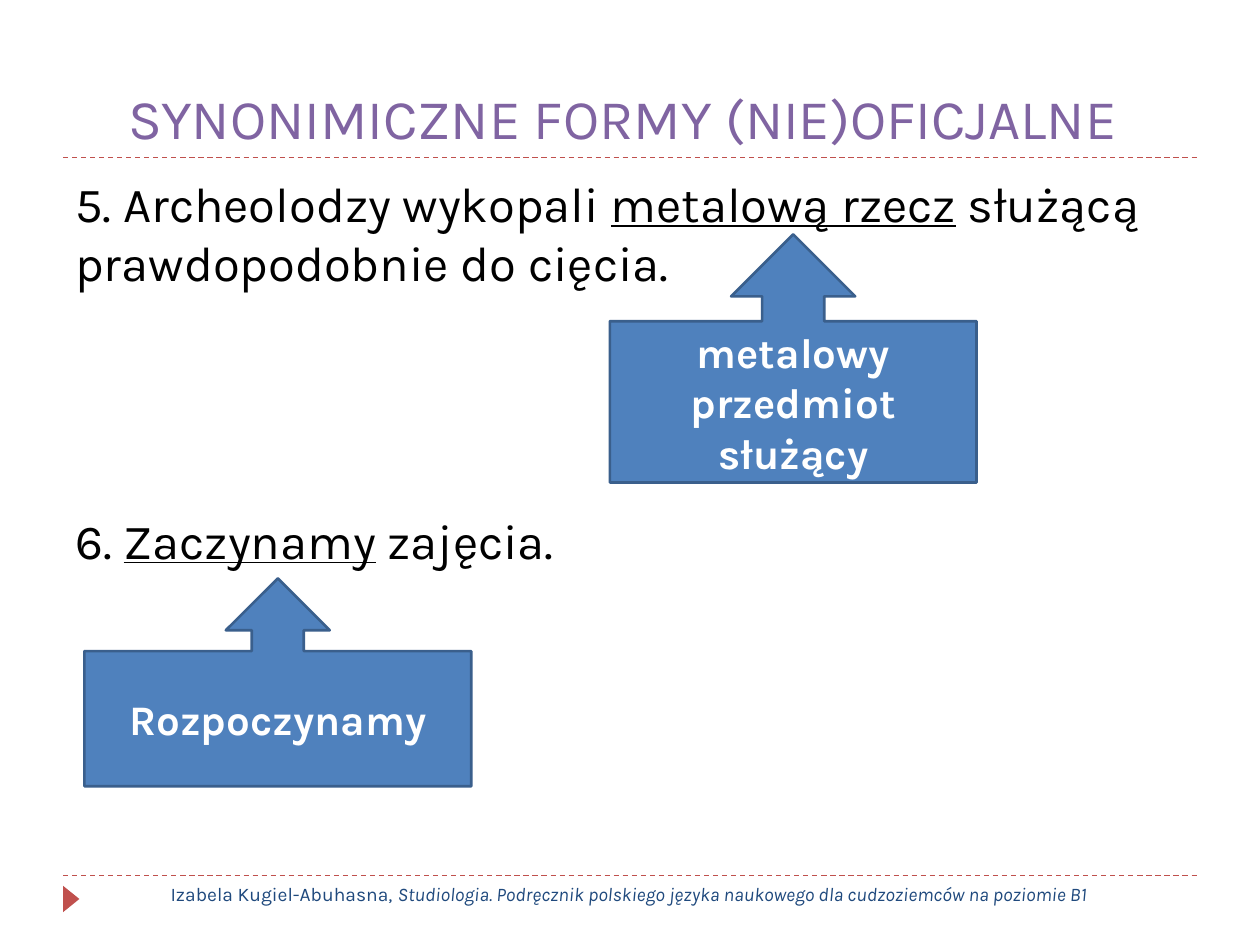
"""Build the slide on synonymous official and unofficial forms."""
from lxml.etree import SubElement
from pptx import Presentation
from pptx.dml.color import RGBColor
from pptx.enum.dml import MSO_LINE
from pptx.enum.shapes import MSO_CONNECTOR, MSO_SHAPE
from pptx.enum.text import MSO_ANCHOR, PP_ALIGN
from pptx.oxml.ns import qn
from pptx.util import Inches, Pt

COLORS = {
    "title": "8064A2", "text": "000000", "footer": "1F497D", "accent": "C0504D",
    "callout": "4F81BD", "outline": "3A5F8C", "white": "FFFFFF",
}


def color(name):
    return RGBColor.from_string(COLORS[name])


def add_run(paragraph, text, size, color_name):
    run = paragraph.add_run()
    run.text = text
    run.font.name = "Karla"
    run.font.size = Pt(size)
    run.font.color.rgb = color(color_name)
    return run


prs = Presentation()
prs.slide_width, prs.slide_height = Inches(10), Inches(7.5)
slide = prs.slides.add_slide(prs.slide_layouts[5])
shapes = slide.shapes

for rule_y in (6.95, 1.25):
    rule = shapes.add_connector(
        MSO_CONNECTOR.STRAIGHT, Inches(0.5), Inches(rule_y), Inches(9.5), Inches(rule_y))
    rule.line.color.rgb = color("accent")
    rule.line.width = Pt(0.75)
    rule.line.dash_style = MSO_LINE.DASH
    SubElement(rule._element.spPr, qn("a:effectLst"))

marker = shapes.add_shape(
    MSO_SHAPE.ISOSCELES_TRIANGLE, Inches(0.46), Inches(7.07), Inches(0.21), Inches(0.13))
marker.rotation = 90
marker.shadow.inherit = False
marker.fill.solid()
marker.fill.fore_color.rgb = color("accent")
marker.line.fill.background()

title = shapes.title
title.left, title.top = Inches(0.5), Inches(0.17)
title.width, title.height = Inches(9), Inches(1.08)
title.text_frame.vertical_anchor = MSO_ANCHOR.BOTTOM
heading = title.text_frame.paragraphs[0]
heading.alignment = PP_ALIGN.CENTER
add_run(heading, "SYNONIMICZNE FORMY (NIE)OFICJALNE ", 32, "title")

footer = shapes.add_textbox(Inches(0.98), Inches(6.95), Inches(8.03), Inches(0.4))
footer.text_frame.word_wrap = True
credit = footer.text_frame.paragraphs[0]
credit.alignment = PP_ALIGN.CENTER
add_run(credit, "Izabela Kugiel-Abuhasna, ", 11, "footer")
book = "Studiologia. Podręcznik polskiego języka naukowego dla cudzoziemców na poziomie B1"
add_run(credit, book, 11, "footer").font.italic = True

sentences = [
    (6, "5. Archeolodzy wykopali ", "metalową rzecz", " służącą prawdopodobnie do cięcia."),
    (125, "6. ", "Zaczynamy", " zajęcia."),
]
exercise = shapes.add_textbox(Inches(0.5), Inches(1.33), Inches(9), Inches(5.4)).text_frame
exercise.word_wrap = True
for number, (space, before, phrase, after) in enumerate(sentences):
    sentence = exercise.add_paragraph() if number else exercise.paragraphs[0]
    sentence.space_before = Pt(space)
    add_run(sentence, before, 28, "text")
    add_run(sentence, phrase, 28, "text").font.underline = True
    add_run(sentence, after, 28, "text")

answers = [
    (4.84, 1.86, 2.91, 1.97, ["metalowy przedmiot", "służący"]),
    (0.67, 4.59, 3.07, 1.65, ["Rozpoczynamy"]),
]
for left, top, width, height, lines in answers:
    answer = shapes.add_shape(
        MSO_SHAPE.UP_ARROW_CALLOUT, Inches(left), Inches(top), Inches(width), Inches(height))
    answer.shadow.inherit = False
    answer.fill.solid()
    answer.fill.fore_color.rgb = color("callout")
    answer.line.color.rgb = color("outline")
    answer.line.width = Pt(1.5)
    answer.text_frame.word_wrap = True
    answer.text_frame.vertical_anchor = MSO_ANCHOR.MIDDLE
    for number, text in enumerate(lines):
        line = answer.text_frame.add_paragraph() if number else answer.text_frame.paragraphs[0]
        line.alignment = PP_ALIGN.CENTER
        add_run(line, text, 24, "white").font.bold = True

prs.save("out.pptx")
